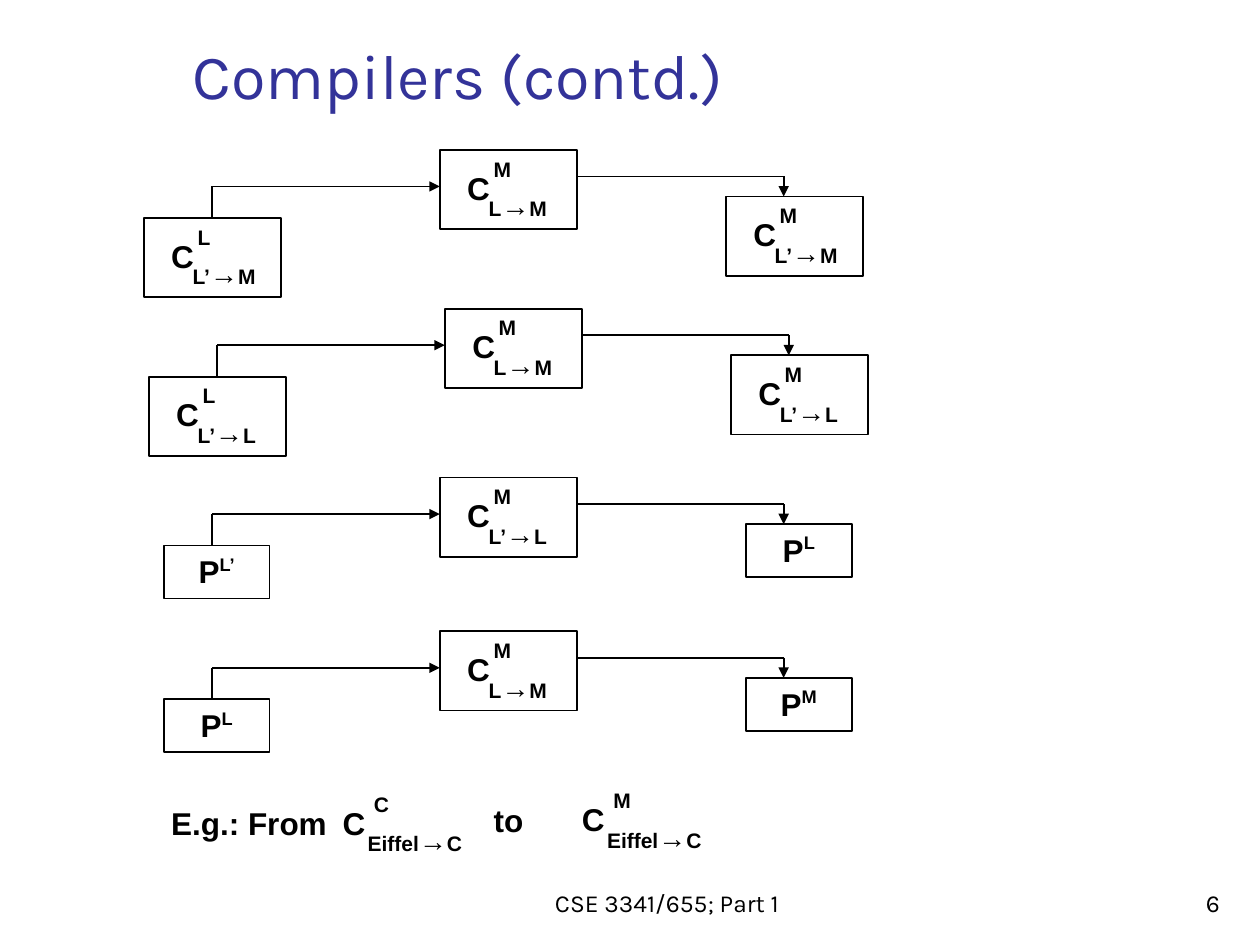
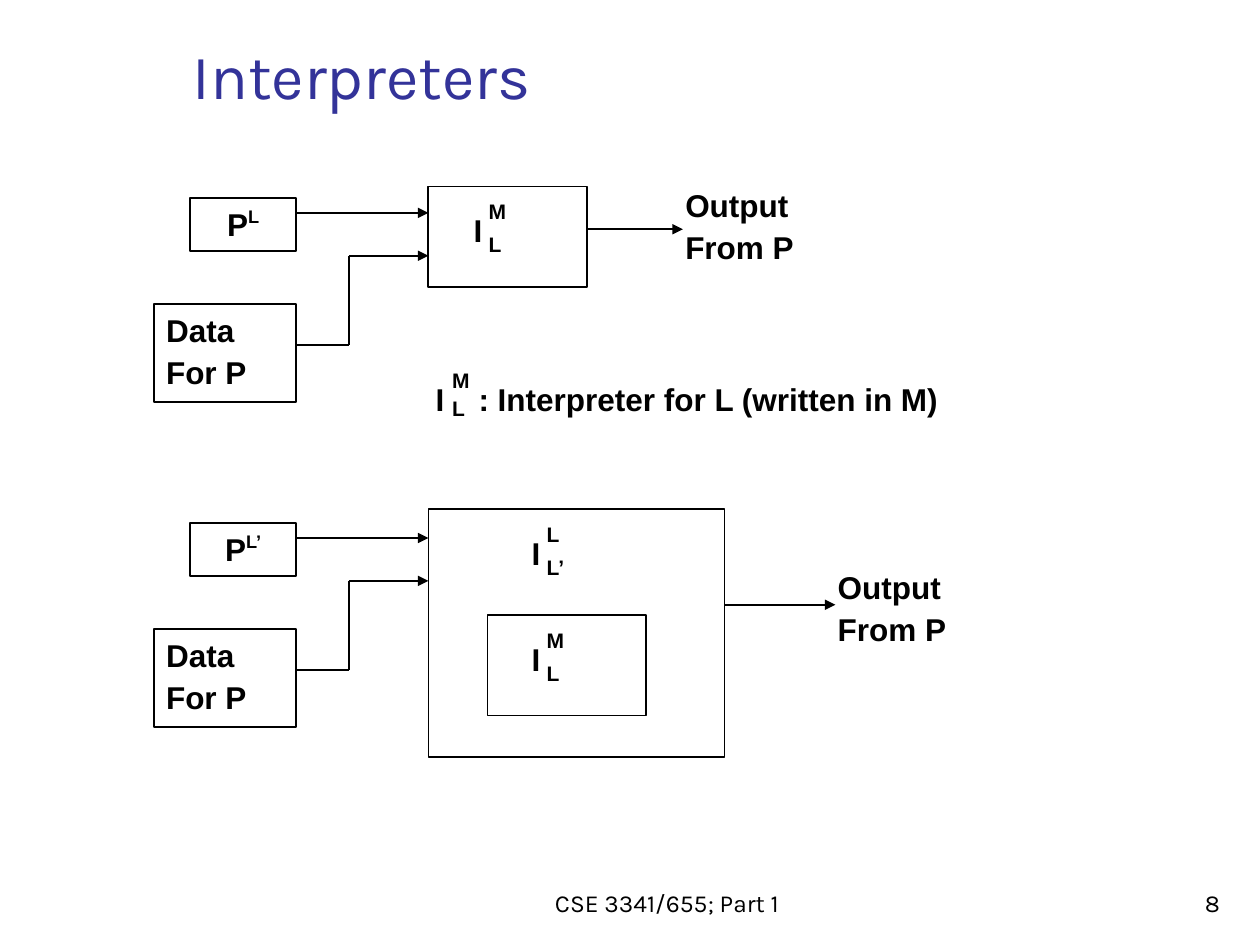
from lxml import etree
from pptx import Presentation
from pptx.dml.color import RGBColor
from pptx.enum.shapes import MSO_CONNECTOR, MSO_SHAPE
from pptx.enum.text import MSO_ANCHOR, PP_ALIGN
from pptx.oxml.ns import qn
from pptx.util import Inches, Pt

RECTANGLE = MSO_SHAPE.RECTANGLE
STRAIGHT = MSO_CONNECTOR.STRAIGHT
TOP, BOTTOM = MSO_ANCHOR.TOP, MSO_ANCHOR.BOTTOM
LEFT, CENTER, RIGHT = PP_ALIGN.LEFT, PP_ALIGN.CENTER, PP_ALIGN.RIGHT
BLACK, TITLE_BLUE = "000000", "333399"
DIAGRAM_FONT, PAGE_FONT = "Arial", "Karla"
FOOTER = "CSE 3341/655; Part 1"


def add_box(page, area, lines=(), framed=False, font=DIAGRAM_FONT, color=BLACK,
            align=LEFT, anchor=TOP, spacing=()):
    """Add a text box or framed rectangle; a run is (text, size, bold, superscript)."""
    area = [Inches(length) for length in area]
    if framed:
        box = page.shapes.add_shape(RECTANGLE, *area)
        box.shadow.inherit = False
        box.fill.background()
        box.line.color.rgb = RGBColor.from_string(BLACK)
        box.line.width = Pt(1)
    else:
        box = page.shapes.add_textbox(*area)
    frame = box.text_frame
    frame.word_wrap = True
    frame.vertical_anchor = anchor
    for index, runs in enumerate(lines):
        para = frame.add_paragraph() if index else frame.paragraphs[0]
        para.alignment = align
        if index:
            para.space_before = Pt(9)
        if spacing:
            para.line_spacing = Pt(spacing[index])
        for text, size, bold, superscript in runs:
            span = para.add_run()
            span.text = text
            span.font.name = font
            span.font.size = Pt(size)
            span.font.bold = bold
            span.font.color.rgb = RGBColor.from_string(color)
            if superscript:
                span.font._element.set("baseline", "40000")
    return box


def add_line(page, start, end, arrow=False):
    line = page.shapes.add_connector(
        STRAIGHT, *[Inches(length) for length in (*start, *end)])
    line.line.color.rgb = RGBColor.from_string(BLACK)
    line.line.width = Pt(1)
    if arrow:
        etree.SubElement(line.line._get_or_add_ln(), qn("a:tailEnd"), type="triangle")
    etree.SubElement(line._element.spPr, qn("a:effectLst"))
    return line


deck = Presentation()
deck.slide_width, deck.slide_height = Inches(10), Inches(7.5)

# Pages with title, footer and number
pages = []
for title, number in (("Compilers (contd.)", "6"), ("Interpreters", "8")):
    page = deck.slides.add_slide(deck.slide_layouts[6])
    for area, text, size, color, align in (
            ((2.48, 6.82, 5.63, 0.51), FOOTER, 14, BLACK, CENTER),
            ((7.7, 6.83, 2.08, 0.5), number, 14, BLACK, RIGHT),
            ((1.43, 0.14, 7.14, 0.8), title, 36, TITLE_BLUE, LEFT)):
        add_box(page, area, [[(text, size, False, False)]], font=PAGE_FONT,
                color=color, align=align, anchor=BOTTOM)
    pages.append(page)
compilers, interpreters = pages

# Stacked symbols: page, x, y, letter, superscript, subscript,
# then the offsets of superscript x, subscript x and subscript y
symbols = [
    (compilers, 2.62, 6.42, "C", "C", "Eiffel→C", 0.25, 0.2, 0.07),
    (compilers, 4.52, 6.39, "C", "M", "Eiffel→C", 0.25, 0.2, 0.07),
    (interpreters, 3.66, 1.72, "I", "M", "L", 0.12, 0.12, 0.07),
    (interpreters, 3.36, 3.06, "I", "M", "L", 0.13, 0.13, 0.03),
    (interpreters, 4.12, 4.28, "I", "L", "L’", 0.12, 0.12, 0.07),
    (interpreters, 4.12, 5.12, "I", "M", "L", 0.12, 0.12, 0.07),
]
# Programs: page, x, y, language
programs = [(interpreters, 1.51, 1.57, "L"), (interpreters, 1.51, 4.15, "L’")]

# Compiler rows: input, compiler and output; a node without subscript is a program
rows = [
    (1.14, 1.19, ("L", "L’→M"), ("M", "L→M"), ("M", "L’→M")),
    (1.18, 2.45, ("L", "L’→L"), ("M", "L→M"), ("M", "L’→L")),
    (1.14, 3.79, ("L’", None), ("M", "L’→L"), ("L", None)),
    (1.14, 5.01, ("L", None), ("M", "L→M"), ("M", None)),
]
compiler_width, compiler_height = 1.09, 0.63
for x, y, *nodes in rows:
    stem_x, drop_x = x + compiler_width / 2, x + 5.08
    stem = add_line(compilers, (stem_x, y + 0.54), (stem_x, y + 0.29))
    add_line(compilers, (stem_x, y + 0.29), (x + 2.35, y + 0.29), arrow=True)
    add_line(compilers, (x + 2.35 + compiler_width, y + 0.21), (drop_x, y + 0.21))
    add_line(compilers, (drop_x, y + 0.21), (drop_x, y + 0.37), arrow=True)
    offsets = ((0, 0.54), (2.35, 0), (4.62, 0.37))
    for (dx, dy), (upper, lower) in zip(offsets, nodes):
        left, top = x + dx, y + dy
        if lower is None:
            programs.append((compilers, left + 0.16, top, upper))
            continue
        box = add_box(compilers, (left, top, compiler_width, compiler_height), framed=True)
        symbols.append((compilers, left + 0.12, top + 0.19, "C", upper, lower,
                        0.21, 0.17, 0.07))
        if dx == 0:
            stem.begin_connect(box, 0)

# Interpreter frames, the second one nested
for area in ((3.4, 1.48, 1.26, 0.8), (3.4, 4.04, 2.35, 1.97), (3.87, 4.88, 1.26, 0.8)):
    add_box(interpreters, area, framed=True)

# Interpreter inputs and outputs
for y, output_x, output_y, arrow_start, arrow_y in (
        (1.57, 5.34, 1.52, 4.66, 1.82), (4.15, 6.55, 4.55, 5.75, 4.8)):
    data = [[(text, 18, True, False)] for text in ("Data", "For P")]
    output = [[(text, 18, True, False)] for text in ("Output", "From P")]
    add_box(interpreters, (1.22, y + 0.84, 1.13, 0.78), data, framed=True, spacing=(22, 15))
    add_box(interpreters, (output_x, output_y, 1.39, 0.67), output, spacing=(15, 15))
    add_line(interpreters, (2.35, y + 0.12), (3.4, y + 0.12), arrow=True)
    add_line(interpreters, (2.35, y + 1.17), (2.77, y + 1.17))
    add_line(interpreters, (2.77, y + 1.17), (2.77, y + 0.46))
    add_line(interpreters, (2.77, y + 0.46), (3.4, y + 0.46), arrow=True)
    add_line(interpreters, (arrow_start, arrow_y), (output_x + 0.08, arrow_y), arrow=True)

# Program boxes
for page, x, y, language in programs:
    add_box(page, (x, y, 0.84, 0.42), [[("P", 18, True, False), (language, 18, True, True)]],
            framed=True, align=CENTER, spacing=(22,))

# Symbols, with the arrow larger and not bold
for page, x, y, letter, upper, lower, upper_dx, lower_dx, lower_dy in symbols:
    source, arrow, target = lower.partition("→")
    lower_runs = [(source, 12, True, False)]
    if arrow:
        lower_runs += [(arrow, 16, False, False), (target, 12, True, False)]
    lower_width = 1.17 if source == "Eiffel" else 1.01
    add_box(page, (x + upper_dx, y - 0.19, 0.34, 0.3), [[(upper, 12, True, False)]])
    add_box(page, (x + lower_dx, y + lower_dy, lower_width, 0.37 if arrow else 0.3),
            [lower_runs])
    add_box(page, (x, y, 0.38, 0.31), [[(letter, 18, True, False)]], spacing=(15,))

# Plain captions
for page, x, y, width, text in (
        (compilers, 1.26, 6.33, 1.72, "E.g.: From"),
        (compilers, 3.82, 6.31, 0.5, "to"),
        (interpreters, 3.7, 2.97, 4.37, ": Interpreter for L (written in M)")):
    add_box(page, (x, y, width, 0.4), [[(text, 18, True, False)]])

deck.save("out.pptx")
